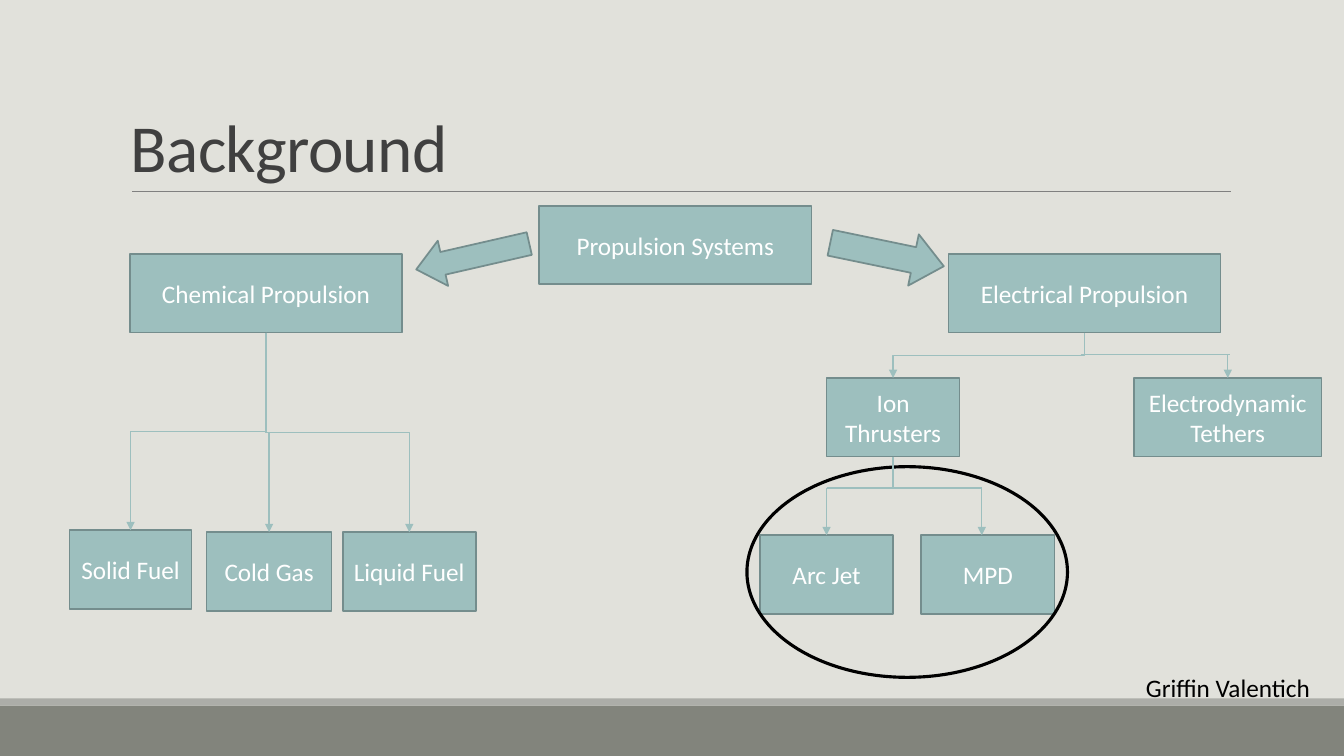
"""Build a slide with a tree of spacecraft propulsion systems."""
from typing import NamedTuple, Optional

from lxml import etree
from pptx import Presentation
from pptx.dml.color import RGBColor
from pptx.enum.shapes import MSO_CONNECTOR, MSO_SHAPE
from pptx.enum.text import MSO_ANCHOR, PP_ALIGN
from pptx.oxml.ns import qn
from pptx.util import Inches, Pt

RECTANGLE, ELLIPSE, DOWN_ARROW = MSO_SHAPE.RECTANGLE, MSO_SHAPE.OVAL, MSO_SHAPE.DOWN_ARROW
STRAIGHT, ELBOW = MSO_CONNECTOR.STRAIGHT, MSO_CONNECTOR.ELBOW
MIDDLE, BOTTOM = MSO_ANCHOR.MIDDLE, MSO_ANCHOR.BOTTOM
CENTER = PP_ALIGN.CENTER
TOP_SITE, BOTTOM_SITE = 0, 2

PAPER = RGBColor(0xE1, 0xE1, 0xDB)
FOOTER = RGBColor(0x82, 0x84, 0x7C)
FOOTER_EDGE = RGBColor(0xAC, 0xAD, 0xA8)
RULE = RGBColor(0x80, 0x80, 0x80)
HEADING = RGBColor(0x40, 0x40, 0x40)
TEAL = RGBColor(0x9D, 0xBF, 0xBE)
TEAL_EDGE = RGBColor(0x74, 0x8D, 0x8D)
WHITE = RGBColor(0xFF, 0xFF, 0xFF)
BLACK = RGBColor(0x00, 0x00, 0x00)

FONT = "Calibri"
COLUMNS, ROWS = 133.33, 75
CELL = Inches(0.1)
NODE_ROWS = 7.8
WIDE, NARROW = 27, 13.2


class Area(NamedTuple):
    """A place on the grid, in columns and rows."""
    col: float
    row: float
    cols: float
    rows: float = NODE_ROWS


class BlockArrow(NamedTuple):
    """A thick arrow from the root to a branch."""
    area: Area
    angle: float


class Branch(NamedTuple):
    """An elbow arrow from a parent node to a child node."""
    parent: str
    child: str


class Segment(NamedTuple):
    """A straight line, optionally joined to nodes at its ends."""
    start: tuple[float, float]
    end: tuple[float, float]
    arrow: bool = False
    below: Optional[str] = None
    above: Optional[str] = None


NODES = {
    "Propulsion Systems": Area(53.5, 20.4, WIDE),
    "Electrical Propulsion": Area(94.1, 25.2, WIDE),
    "Chemical Propulsion": Area(12.9, 25.2, WIDE),
    "Solid Fuel": Area(6.9, 52.6, 12.1),
    "Liquid Fuel": Area(34, 52.8, NARROW),
    "Cold Gas": Area(20.5, 52.8, 12.4),
    "Ion Thrusters": Area(82, 37.5, NARROW),
    "Arc Jet": Area(75.4, 53.1, NARROW),
    "MPD": Area(91.4, 53.1, NARROW),
    "Electrodynamic Tethers": Area(112.5, 37.5, 18.6),
}
BLOCK_ARROWS = [
    BlockArrow(Area(44.6, 19.7, 4.6, 11.5), 77.1),
    BlockArrow(Area(85.4, 19.5, 5.2, 11.5), 281.7),
]
BRANCHES = [
    Branch("Chemical Propulsion", "Solid Fuel"),
    Branch("Chemical Propulsion", "Cold Gas"),
    Branch("Chemical Propulsion", "Liquid Fuel"),
    Branch("Electrical Propulsion", "Ion Thrusters"),
]
ION_FORK, TETHER_FORK = 48.4, 35.2
SEGMENTS = [
    Segment((107.2, TETHER_FORK), (122, TETHER_FORK)),
    Segment((121.8, TETHER_FORK), (121.8, 37.5), True, above="Electrodynamic Tethers"),
    Segment((88.6, 45.3), (88.6, ION_FORK), below="Ion Thrusters"),
    Segment((82, ION_FORK), (97.4, ION_FORK)),
    Segment((82, ION_FORK), (82, 53.1), True, above="Arc Jet"),
    Segment((97.4, ION_FORK), (97.4, 53.1), True),
]


def grid(units: float) -> int:
    """Turn grid units into EMU."""
    return round(units * CELL)


def place(area: Area) -> list[int]:
    """Return left, top, width and height in EMU."""
    return [grid(units) for units in area]


def add_block(slide, kind, area: Area, fill=None, edge=None, weight: float = 1.25):
    """Add a preset shape with an optional fill and outline."""
    block = slide.shapes.add_shape(kind, *place(area))
    block.shadow.inherit = False
    if fill is None:
        block.fill.background()
    else:
        block.fill.solid()
        block.fill.fore_color.rgb = fill
    if edge is None:
        block.line.fill.background()
    else:
        block.line.color.rgb = edge
        block.line.width = Pt(weight)
    return block


def write(paragraph, words: str, size: float, color: RGBColor):
    """Add one styled run."""
    run = paragraph.add_run()
    run.text = words
    run.font.name = FONT
    run.font.size = Pt(size)
    run.font.color.rgb = color
    return run


def add_node(slide, label: str, area: Area):
    """Add a labelled box of the tree."""
    node = add_block(slide, RECTANGLE, area, TEAL, TEAL_EDGE)
    frame = node.text_frame
    frame.word_wrap = True
    frame.vertical_anchor = MIDDLE
    frame.paragraphs[0].alignment = CENTER
    write(frame.paragraphs[0], label, 18, WHITE)
    return node


def style_line(link, color: RGBColor, weight: float, arrow: bool) -> None:
    """Set colour, width and arrowhead, and drop the shadow."""
    link.line.color.rgb = color
    link.line.width = Pt(weight)
    if arrow:
        outline = link.line._get_or_add_ln()
        etree.SubElement(outline, qn("a:tailEnd"), type="triangle")
    etree.SubElement(link._element.spPr, qn("a:effectLst"))


def add_segment(slide, segment: Segment, nodes: dict, color=TEAL, weight: float = 1) -> None:
    """Add a straight line and join it to its nodes."""
    ends = [grid(units) for units in segment.start + segment.end]
    link = slide.shapes.add_connector(STRAIGHT, *ends)
    if segment.below:
        link.begin_connect(nodes[segment.below], BOTTOM_SITE)
    if segment.above:
        link.end_connect(nodes[segment.above], TOP_SITE)
    style_line(link, color, weight, segment.arrow)


def add_branch(slide, branch: Branch, nodes: dict) -> None:
    """Add an elbow arrow that leaves downward and enters from above."""
    parent, child = nodes[branch.parent], nodes[branch.child]
    start_x, start_y = parent.left + parent.width // 2, parent.top + parent.height
    end_x, end_y = child.left + child.width // 2, child.top
    link = slide.shapes.add_connector(ELBOW, start_x, start_y, end_x, end_y)
    link.begin_connect(parent, BOTTOM_SITE)
    link.end_connect(child, TOP_SITE)
    link.width, link.height = end_y - start_y, abs(end_x - start_x)
    link.left = (start_x + end_x - link.width) // 2
    link.top = (start_y + end_y - link.height) // 2
    rightward = end_x > start_x
    turn = link._element.spPr.find(qn("a:xfrm"))
    turn.set("rot", "16200000" if rightward else "5400000")
    turn.set("flipH", "1" if rightward else "0")
    turn.set("flipV", "0")
    style_line(link, TEAL, 1, True)


def main() -> None:
    """Draw the slide and save it."""
    deck = Presentation()
    deck.slide_width, deck.slide_height = grid(COLUMNS), grid(ROWS)
    slide = deck.slides.add_slide(deck.slide_layouts[6])
    slide.background.fill.solid()
    slide.background.fill.fore_color.rgb = PAPER

    add_block(slide, RECTANGLE, Area(0, 70, COLUMNS, 5), FOOTER)
    add_block(slide, RECTANGLE, Area(0, 69.3, COLUMNS, 0.7), FOOTER_EDGE)
    add_segment(slide, Segment((13.1, 19), (122.1, 19)), {}, RULE, 0.5)

    heading = slide.shapes.add_textbox(*place(Area(12, 3.1, 110, 15.9))).text_frame
    heading.word_wrap = True
    heading.vertical_anchor = BOTTOM
    heading.paragraphs[0].line_spacing = 0.85
    title = write(heading.paragraphs[0], "Background", 48, HEADING)
    title.font._element.set("spc", "-50")

    nodes = {label: add_node(slide, label, area) for label, area in NODES.items()}
    for pointer in BLOCK_ARROWS:
        arrow = add_block(slide, DOWN_ARROW, pointer.area, TEAL, TEAL_EDGE)
        arrow.rotation = pointer.angle
        arrow.adjustments[0], arrow.adjustments[1] = 0.5, 0.59
    for branch in BRANCHES:
        add_branch(slide, branch, nodes)
    add_block(slide, ELLIPSE, Area(74.1, 46.3, 31.8, 20.9), edge=BLACK, weight=2.25)

    presenter = slide.shapes.add_textbox(*place(Area(112.7, 66.2, 18.6, 4))).text_frame
    presenter.word_wrap = False
    write(presenter.paragraphs[0], "Griffin Valentich", 18, BLACK)
    for segment in SEGMENTS:
        add_segment(slide, segment, nodes)
    deck.save("out.pptx")


if __name__ == "__main__":
    main()
